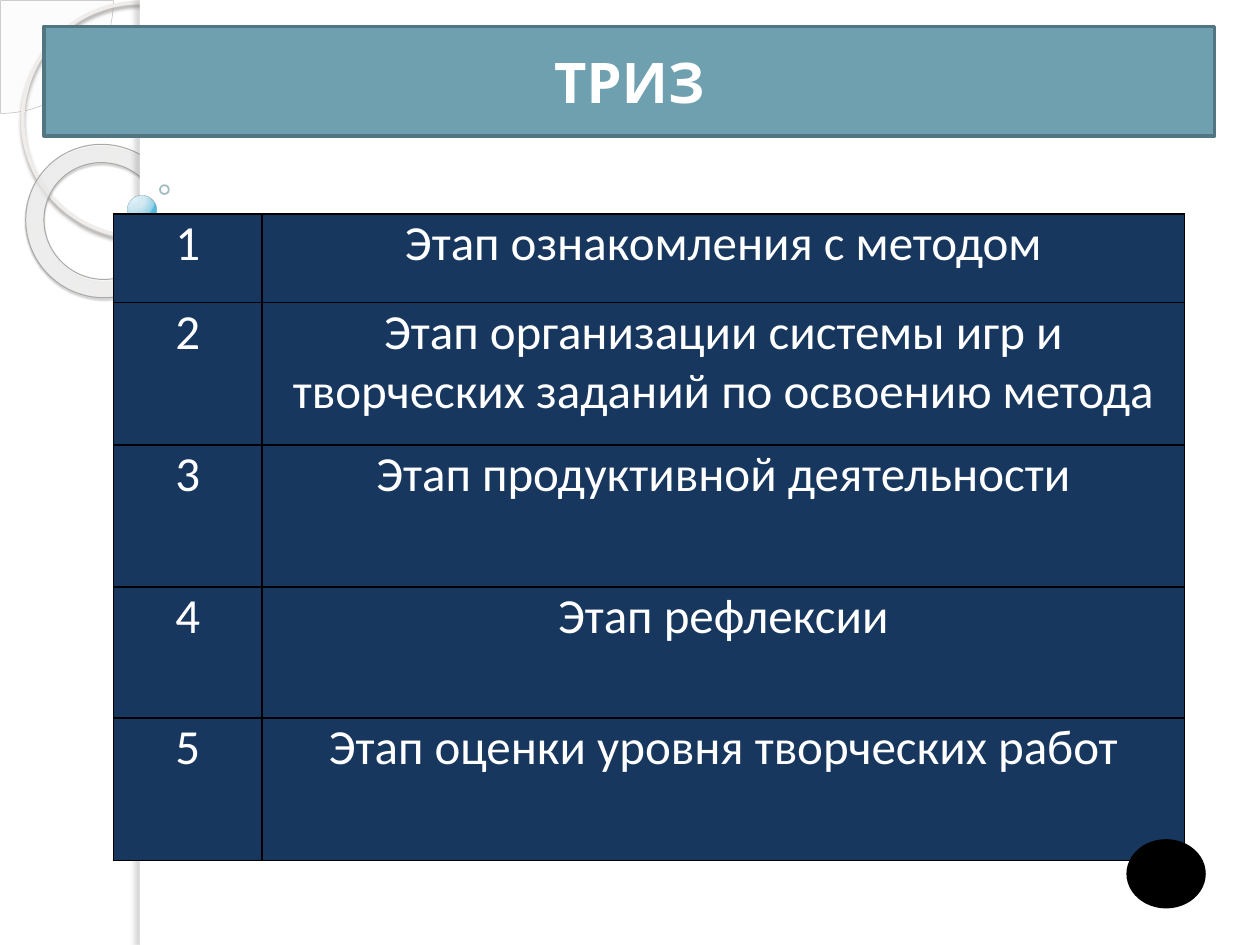
"""Build a slide listing the five stages of the TRIZ method."""
from pptx import Presentation
from pptx.dml.color import RGBColor
from pptx.enum.shapes import MSO_SHAPE
from pptx.enum.text import MSO_ANCHOR, PP_ALIGN
from pptx.oxml import parse_xml
from pptx.oxml.ns import nsdecls, qn
from pptx.util import Inches, Pt

THEME = {
    "white": "FFFFFF", "black": "000000", "navy": "17375E",
    "banner": "6EA0B0", "banner_edge": "517682",
    "pie": "F8F8F7", "pie_edge": "B7B4B0",
    "ring": "EFECEA", "ring_shadow": "9E9B99",
    "donut_edge": "ACA8A5", "donut_shadow": "4F4D4C", "panel_shadow": "696867",
    "bubble_edge": "669AAB", "small_bubble_edge": "618D9B",
    "donut_stops": [(0, "FAFAF9", 70), (70, "FDFDFC", 55), (100, "C0B9B3", 60)],
    "bubble_stops": [(0, "DFF5FE", 95), (50, "CCE6F0", 90), (95, "87CBE4", 88), (100, "38B2D9", 85)],
    "title_font": "Cabin", "title_size": 32,
    "table_font": "Calibri", "table_size": 28,
}
STAGES = [
    ("Этап ознакомления с методом", 7),
    ("Этап организации системы игр и творческих заданий по освоению метода", 11.3),
    ("Этап продуктивной деятельности", 11.3),
    ("Этап рефлексии", 10.4),
    ("Этап оценки уровня творческих работ", 11.3),
]
COLUMN_WIDTHS = (11.8, 73.2)

presentation = Presentation()
presentation.slide_width, presentation.slide_height = Inches(10), Inches(7.5)
grid = presentation.slide_width / 100
slide = presentation.slides.add_slide(presentation.slide_layouts[6])


def add_figure(kind, box, fill=None, line=None, opacity=(100, 100), stops=None, focus=None, shadow=None):
    shape = slide.shapes.add_shape(kind, *(round(value * grid) for value in box))
    shape.shadow.inherit = False
    properties = shape._element.spPr
    for target, color, percent in ((shape.fill, fill, opacity[0]),
                                   (shape.line.fill, line and line[0], opacity[1])):
        if not color:
            target.background()
            continue
        target.solid()
        target.fore_color.rgb = RGBColor.from_string(color)
        if percent < 100:
            parent = properties if target is shape.fill else properties.find(qn("a:ln"))
            parent.find(qn("a:solidFill"))[0].append(
                parse_xml(f'<a:alpha {nsdecls("a")} val="{percent * 1000}"/>'))
    if line:
        shape.line.width = Pt(line[1])
    if stops:
        stop_list = "".join(
            f'<a:gs pos="{position * 1000}"><a:srgbClr val="{color}">'
            f'<a:alpha val="{alpha * 1000}"/></a:srgbClr></a:gs>'
            for position, color, alpha in stops)
        edges = " ".join(f'{side}="{value * 1000}"' for side, value in zip("ltrb", focus))
        properties.replace(properties.find(qn("a:noFill")), parse_xml(
            f'<a:gradFill {nsdecls("a")} rotWithShape="1"><a:gsLst>{stop_list}</a:gsLst>'
            f'<a:path path="circle"><a:fillToRect {edges}/></a:path></a:gradFill>'))
    if shadow:
        color, alpha, blur, distance, angle = shadow
        properties.find(qn("a:effectLst")).append(parse_xml(
            f'<a:outerShdw {nsdecls("a")} blurRad="{Pt(blur)}" dist="{Pt(distance)}" '
            f'dir="{angle * 60000}" algn="ctr" rotWithShape="0"><a:srgbClr val="{color}">'
            f'<a:alpha val="{alpha * 1000}"/></a:srgbClr></a:outerShdw>'))
    return shape


def add_centered_run(paragraph, text, font, size, bold=False):
    paragraph.alignment = PP_ALIGN.CENTER
    run = paragraph.add_run()
    run.text = text
    run.font.name, run.font.size, run.font.bold = font, Pt(size), bold
    run.font.color.rgb = RGBColor.from_string(THEME["white"])


pie = add_figure(MSO_SHAPE.PIE, (-8.9, -8.9, 17.9, 17.9), THEME["pie"],
                 (THEME["pie_edge"], 0.25), opacity=(33, 100))
pie.adjustments[0], pie.adjustments[1] = 0, 54.02
add_figure(MSO_SHAPE.OVAL, (1.8, 0.2, 18.6, 18.6), line=(THEME["ring"], 2.15),
           shadow=(THEME["ring_shadow"], 85, 2, 2, 90))
donut = add_figure(MSO_SHAPE.DONUT, (2, 11.5, 12.3, 12.1), line=(THEME["donut_edge"], 0.58),
                   stops=THEME["donut_stops"], focus=(-408, -50, 508, 150),
                   shadow=(THEME["donut_shadow"], 35, 1, 1.2, 75))
donut.adjustments[0] = 0.12
donut.rotation = 38.6
add_figure(MSO_SHAPE.RECTANGLE, (11.1, 0, 88.9, 75), THEME["white"])
add_figure(MSO_SHAPE.RECTANGLE, (11.1, 0, 0.8, 75), THEME["white"],
           shadow=(THEME["panel_shadow"], 25, 3, 3, 180))
add_figure(MSO_SHAPE.OVAL, (10.1, 15.5, 2.3, 2.3), line=(THEME["bubble_edge"], 0.16),
           opacity=(100, 60), stops=THEME["bubble_stops"], focus=(25, 12, 75, 88))
add_figure(MSO_SHAPE.OVAL, (12.7, 14.7, 0.7, 0.7), line=(THEME["small_bubble_edge"], 1),
           opacity=(100, 60))

banner = add_figure(MSO_SHAPE.RECTANGLE, (3.5, 2.1, 92.9, 8.7), THEME["banner"],
                    (THEME["banner_edge"], 2))
banner.text_frame.vertical_anchor = MSO_ANCHOR.MIDDLE
add_centered_run(banner.text_frame.paragraphs[0], "ТРИЗ",
                 THEME["title_font"], THEME["title_size"], True)

table_box = (9, 17, sum(COLUMN_WIDTHS), sum(height for _, height in STAGES))
table = slide.shapes.add_table(len(STAGES), len(COLUMN_WIDTHS),
                               *(round(value * grid) for value in table_box)).table
for column, width in zip(table.columns, COLUMN_WIDTHS):
    column.width = round(width * grid)
for number, (row, (stage, height)) in enumerate(zip(table.rows, STAGES), 1):
    row.height = round(height * grid)
    for cell, text in zip(row.cells, (str(number), stage)):
        cell.margin_left = cell.margin_right = Inches(0.01)
        cell.margin_top = cell.margin_bottom = 0
        cell.fill.solid()
        cell.fill.fore_color.rgb = RGBColor.from_string(THEME["navy"])
        add_centered_run(cell.text_frame.paragraphs[0], text,
                         THEME["table_font"], THEME["table_size"])
        for index, side in enumerate("LRTB"):
            cell._tc.get_or_add_tcPr().insert(index, parse_xml(
                f'<a:ln{side} {nsdecls("a")} w="{Pt(1)}"><a:solidFill>'
                f'<a:srgbClr val="{THEME["black"]}"/></a:solidFill></a:ln{side}>'))

add_figure(MSO_SHAPE.OVAL, (89.4, 66.6, 6.3, 5.5), THEME["black"])

presentation.save("out.pptx")
